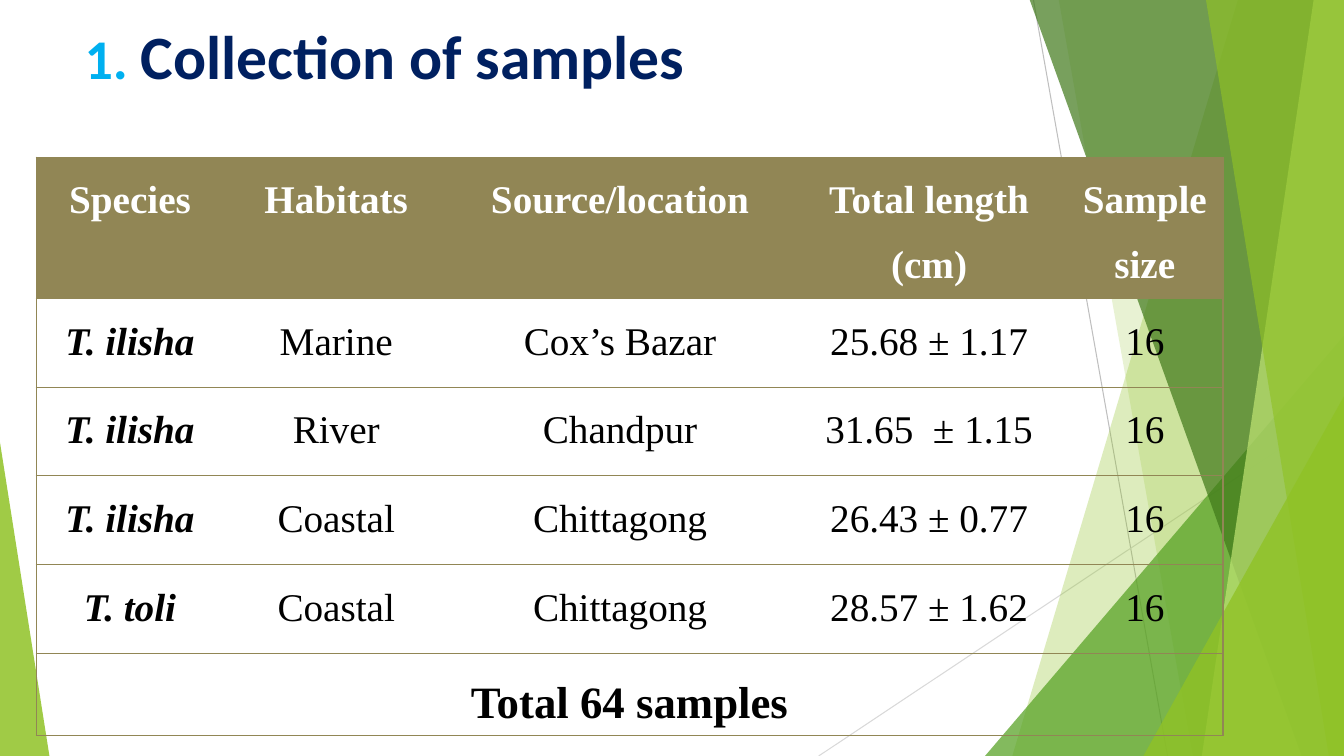
"""Build a slide with a table of collected samples on a faceted green background."""
from typing import Any, NamedTuple

from lxml import etree
from pptx import Presentation
from pptx.dml.color import RGBColor
from pptx.enum.shapes import MSO_CONNECTOR, MSO_SHAPE
from pptx.enum.text import PP_ALIGN
from pptx.oxml.ns import qn
from pptx.util import Pt

STRAIGHT = MSO_CONNECTOR.STRAIGHT
TRIANGLE = MSO_SHAPE.ISOSCELES_TRIANGLE
CENTER = PP_ALIGN.CENTER

PX = 9144
W, H = 1333, 750
TOP = -1
OLIVE = "918655"
GREEN = "90C226"
SERIF = "Times New Roman"


class Line(NamedTuple):
    x1: int
    y1: int
    x2: int
    y2: int
    color: str


class Band(NamedTuple):
    """A facet that reaches the right edge of the slide."""
    top_x: int
    bottom_x: int
    color: str
    alpha: int


class Wedge(NamedTuple):
    """A right triangle that stands on the bottom edge of the slide."""
    x: int
    y: int
    w: int
    apex: int
    color: str
    alpha: int


LINES = [Line(1025, 0, 1158, H, "BFBFBF"), Line(W, 403, 812, H, "D9D9D9")]
FACETS = [
    Band(1228, 1004, GREEN, 30),
    Band(1050, 1183, GREEN, 20),
    Wedge(977, 333, 356, 1, "54A021", 72),
    Band(1021, 1291, "3F7819", 70),
    Band(1303, 1192, "C0E474", 70),
    Band(1196, 1318, GREEN, 65),
    Wedge(1134, 393, 199, 1, GREEN, 80),
    Wedge(0, 439, 49, 0, GREEN, 85),
]
TITLE = [
    ("1. ", {"size": Pt(40), "name": "Calibri", "bold": True}, "00B0F0"),
    ("Collection of samples", {"size": Pt(44), "name": "Calibri", "bold": True}, "002060"),
]
COLS = [186, 223, 340, 273, 155]
ROWS = [116, 88, 88, 88, 88, 82]
DATA = [
    ["Species", "Habitats", "Source/location", "Total length (cm)", "Sample size"],
    ["T. ilisha", "Marine", "Cox’s Bazar", "25.68 ± 1.17", "16"],
    ["T. ilisha", "River", "Chandpur", "31.65  ± 1.15", "16"],
    ["T. ilisha", "Coastal", "Chittagong", "26.43 ± 0.77", "16"],
    ["T. toli", "Coastal", "Chittagong", "28.57 ± 1.62", "16"],
    ["Total 64 samples", "", "", "", ""],
]
BODY = {"size": Pt(28), "name": SERIF, "bold": False, "italic": False}
HEADER = BODY | {"bold": True}
SPECIES = HEADER | {"italic": True}
TOTAL = HEADER | {"size": Pt(32)}
CELL = {"margin_left": 7 * PX, "margin_right": 7 * PX, "margin_top": 0, "margin_bottom": 0}
PARAGRAPH = {"alignment": CENTER, "line_spacing": 1.5, "space_before": Pt(6)}


def rgb(color: str) -> RGBColor:
    """Turn a hex string into a colour."""
    return RGBColor.from_string(color)


def apply(target: Any, values: dict[str, Any]) -> None:
    """Set each named attribute on the target."""
    for name, value in values.items():
        setattr(target, name, value)


def add_run(p: Any, text: str, font: dict[str, Any], color: str) -> None:
    """Append one formatted run to a paragraph."""
    r = p.add_run()
    r.text = text
    apply(r.font, font)
    r.font.color.rgb = rgb(color)


def add_line(s: Any, line: Line) -> None:
    """Draw one thin line without a shadow."""
    sp = s.shapes.add_connector(STRAIGHT, *(v * PX for v in line[:4]))
    sp.line.color.rgb = rgb(line.color)
    sp.line.width = Pt(0.75)
    etree.SubElement(sp.element.spPr, qn("a:effectLst"))


def add_facet(s: Any, facet: Band | Wedge) -> None:
    """Draw one translucent facet."""
    if isinstance(facet, Band):
        fb = s.shapes.build_freeform(facet.top_x, TOP, scale=PX)
        fb.add_line_segments([(W, TOP), (W, H), (facet.bottom_x, H)], close=True)
        sp = fb.convert_to_shape()
    else:
        box = (facet.x, facet.y, facet.w, H - facet.y)
        sp = s.shapes.add_shape(TRIANGLE, *(v * PX for v in box))
        sp.adjustments[0] = facet.apex
    sp.shadow.inherit = False
    sp.fill.solid()
    sp.fill.fore_color.rgb = rgb(facet.color)
    fill = sp.element.spPr.find(f"{qn('a:solidFill')}/{qn('a:srgbClr')}")
    etree.SubElement(fill, qn("a:alpha"), val=str(facet.alpha * 1000))
    sp.line.fill.background()


def add_title(s: Any) -> None:
    """Write the numbered heading."""
    sp = s.shapes.add_textbox(74 * PX, 13 * PX, 940 * PX, 648 * PX)
    tf = sp.text_frame
    tf.word_wrap = True
    p = tf.paragraphs[0]
    p.space_before = Pt(10)
    for text, font, color in TITLE:
        add_run(p, text, font, color)


def set_borders(cell: Any, left: bool, right: bool) -> None:
    """Rule a cell above and below, and at the sides where asked."""
    sides = {"lnL": left, "lnR": right, "lnT": True, "lnB": True}
    tc_pr = cell._tc.get_or_add_tcPr()
    for tag, shown in sides.items():
        ln = etree.SubElement(tc_pr, qn(f"a:{tag}"), w=str(Pt(1)))
        if shown:
            fill = etree.SubElement(ln, qn("a:solidFill"))
            etree.SubElement(fill, qn("a:srgbClr"), val=OLIVE)
        else:
            etree.SubElement(ln, qn("a:noFill"))


def cell_font(row: int, col: int) -> dict[str, Any]:
    """Choose the font values for a cell by its place."""
    if row == 0:
        return HEADER
    if row == len(ROWS) - 1:
        return TOTAL
    return SPECIES if col == 0 else BODY


def add_samples_table(s: Any) -> None:
    """Draw the table of samples with its merged total row."""
    box = (36, 156, sum(COLS), sum(ROWS))
    frame = s.shapes.add_table(len(ROWS), len(COLS), *(v * PX for v in box))
    table = frame.table
    apply(table, {"first_row": False, "horz_banding": False})
    for column, width in zip(table.columns, COLS):
        column.width = width * PX
    for row, height in zip(table.rows, ROWS):
        row.height = height * PX
    last_row, last_col = len(ROWS) - 1, len(COLS) - 1
    table.cell(last_row, 0).merge(table.cell(last_row, last_col))
    for i, texts in enumerate(DATA):
        for j, text in enumerate(texts):
            cell = table.cell(i, j)
            total = i == last_row
            set_borders(cell, j == 0, j == last_col or (total and j == 0))
            apply(cell, CELL)
            if i == 0:
                cell.fill.solid()
                cell.fill.fore_color.rgb = rgb(OLIVE)
            else:
                cell.fill.background()
            if text:
                p = cell.text_frame.paragraphs[0]
                apply(p, PARAGRAPH)
                add_run(p, text, cell_font(i, j), "000000" if i else "FFFFFF")


def main() -> None:
    """Build and save the slide."""
    prs = Presentation()
    apply(prs, {"slide_width": W * PX, "slide_height": H * PX})
    s = prs.slides.add_slide(prs.slide_layouts[6])
    for line in LINES:
        add_line(s, line)
    for facet in FACETS:
        add_facet(s, facet)
    add_title(s)
    add_samples_table(s)
    prs.save("out.pptx")


if __name__ == "__main__":
    main()
